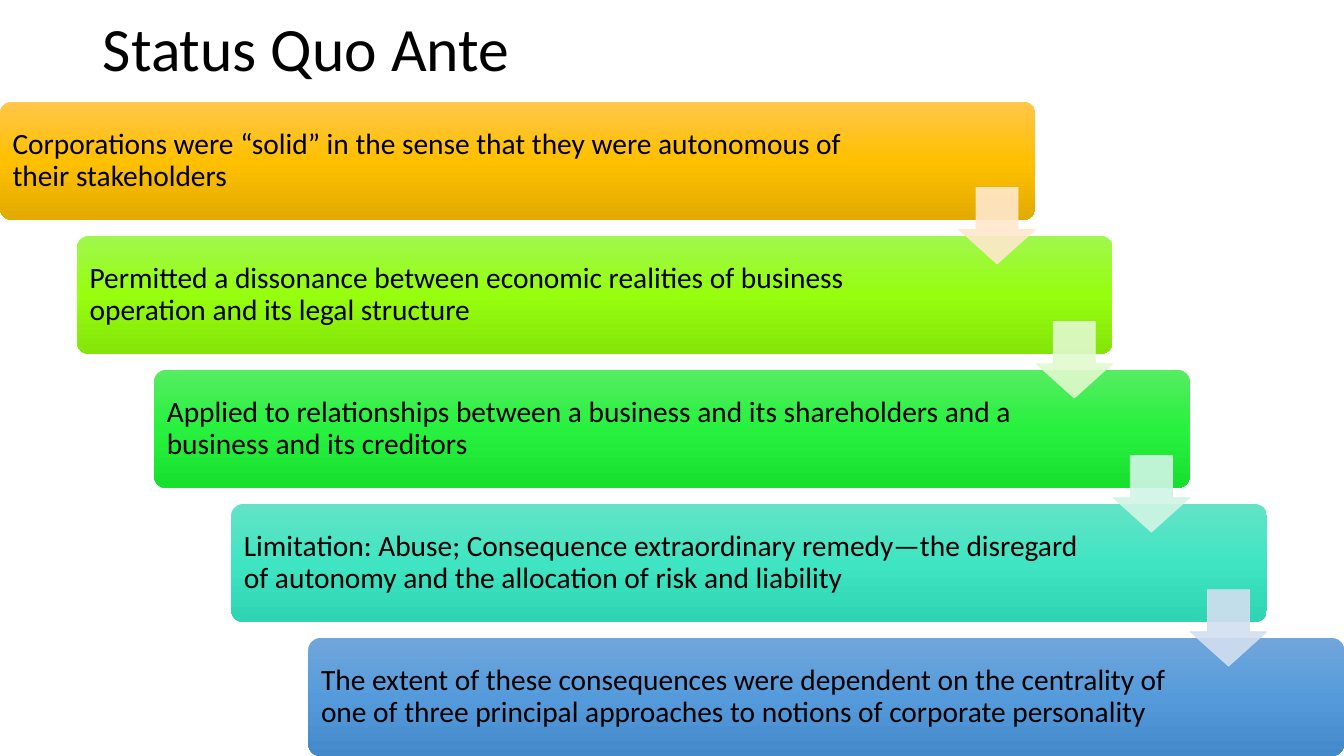
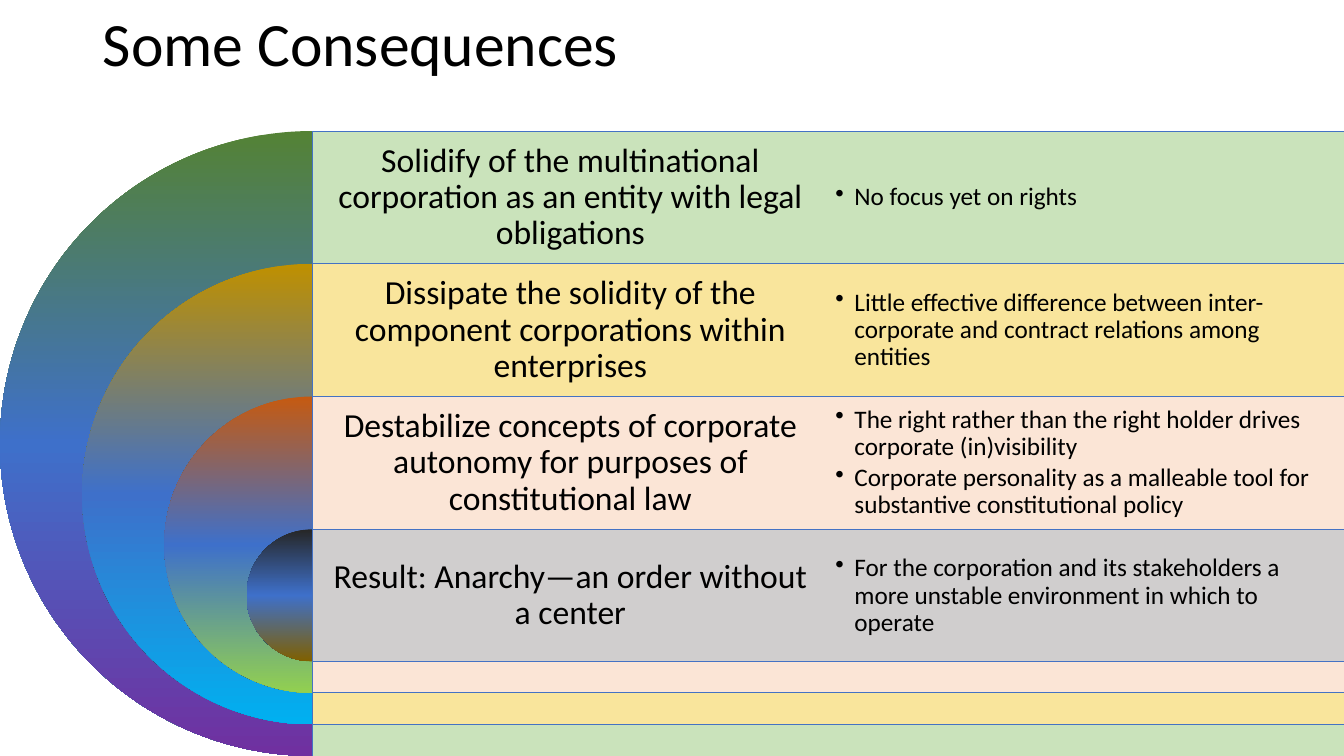
import copy

import lxml.etree
import pptx
import pptx.dml.color
import pptx.enum.shapes
import pptx.enum.text
import pptx.oxml.ns
import pptx.util

Inches = pptx.util.Inches
Pt = pptx.util.Pt
qn = pptx.oxml.ns.qn
Kind = pptx.enum.shapes.MSO_SHAPE
Align = pptx.enum.text.PP_ALIGN
Anchor = pptx.enum.text.MSO_ANCHOR

WIDE, HIGH = 13.33, 7.5
INK, EDGE, MID = "000000", "4472C4", "3E70CA"
TITLE = {"size": Pt(44), "name": "Calibri"}
STEP = {"size": Pt(21), "name": "Calibri"}
HEAD = {"size": Pt(24), "name": "Calibri"}
NOTE = {"size": Pt(18), "name": "Calibri"}
LEFT = {"alignment": Align.LEFT, "line_spacing": 0.9}
CENTER = {"alignment": Align.CENTER, "line_spacing": 0.9}
LIST = {"alignment": Align.LEFT, "line_spacing": 0.9, "space_after": Pt(2.7)}

STEPS = [
    ("Corporations were “solid” in the sense that they were autonomous of their stakeholders",
     ("FFC64B", "FFC000", "E3AB00"), "FFE8CC"),
    ("Permitted a dissonance between economic realities of business operation and its legal structure",
     ("A0F74E", "96FE0E", "85E509"), "E1FACE"),
    ("Applied to relationships between a business and its shareholders and a business and its creditors",
     ("56EC62", "27F13E", "18E02F"), "D0F5E5"),
    ("Limitation: Abuse; Consequence extraordinary remedy—the disregard of autonomy "
     "and the allocation of risk and liability",
     ("63E3C6", "3FE5C3", "2FD4B2"), "D2DFF0"),
    ("The extent of these consequences were dependent on the centrality of "
     "one of three principal approaches to notions of corporate personality",
     ("71A6DB", "559BDB", "448ACA"), None),
]

RINGS = [
    ("Solidify of the multinational corporation as an entity with legal obligations",
     ["No focus yet on rights"],
     ("548235", MID, "7030A0"), "C5E0B4", 90),
    ("Dissipate the solidity of the component corporations within enterprises",
     ["Little effective difference between inter-corporate and contract relations among entities"],
     ("BF9000", MID, "00B0F0"), "FFE699", 90),
    ("Destabilize concepts of corporate autonomy for purposes of constitutional law",
     ["The right rather than the right holder drives corporate (in)visibility",
      "Corporate personality as a malleable tool for substantive constitutional policy"],
     ("C55A11", MID, "92D050"), "FBE5D6", 100),
    ("Result: Anarchy—an order without a center",
     ["For the corporation and its stakeholders a more unstable environment in which to operate"],
     ("262626", MID, "806000"), "D0CECE", 100),
]


def color(text):
    return pptx.dml.color.RGBColor.from_string(text)


def apply(item, values):
    for name, value in values.items():
        setattr(item, name, value)


def place(box):
    return [Inches(size) for size in box]


def bullet(para):
    props = para._p.get_or_add_pPr()
    props.set("marL", str(Inches(0.19)))
    props.set("indent", str(-Inches(0.19)))
    mark = lxml.etree.SubElement(props, qn("a:buChar"))
    mark.set("char", "•")


def write(shape, lines, font, style, pads, marked=False):
    frame = shape.text_frame
    sides = ("margin_left", "margin_top", "margin_right", "margin_bottom")
    apply(frame, dict(zip(sides, place(pads))))
    apply(frame, {"word_wrap": True, "vertical_anchor": Anchor.MIDDLE})
    for index, line in enumerate(lines):
        para = frame.add_paragraph() if index else frame.paragraphs[0]
        if marked:
            bullet(para)
        apply(para, style)
        run = para.add_run()
        run.text = line
        apply(run.font, font)
        run.font.color.rgb = color(INK)


def label(slide, box, *args, **extra):
    write(slide.shapes.add_textbox(*place(box)), *args, **extra)


def block(slide, kind, box, tune=()):
    shape = slide.shapes.add_shape(kind, *place(box))
    shape.shadow.inherit = False
    shape.line.fill.background()
    for index, value in enumerate(tune):
        shape.adjustments[index] = value
    return shape


def blend(shape, tones):
    fill = shape.fill
    fill.gradient()
    fill.gradient_angle = 270
    stops = shape._element.spPr.find(".//" + qn("a:gsLst"))
    stops.insert(1, copy.deepcopy(stops[0]))
    for stop, tone, spot in zip(fill.gradient_stops, tones, (0, 0.5, 1)):
        stop.color.rgb = color(tone)
        stop.position = spot


def paint(item, tone, alpha):
    item.solid()
    item.fore_color.rgb = color(tone)


def tint(shape, fill, line, alpha, clear=100):
    for part, tone, level, tag in (
        (shape.fill, fill, alpha, "a:solidFill"),
        (shape.line.fill, line, clear, "a:ln/a:solidFill"),
    ):
        part.solid()
        part.fore_color.rgb = color(tone)
        if level < 100:
            route = "/".join(qn(name) for name in tag.split("/"))
            node = shape._element.spPr.find(route + "/" + qn("a:srgbClr"))
            lxml.etree.SubElement(node, qn("a:alpha")).set("val", str(level * 1000))
    shape.line.width = Pt(0.5)


def page(deck, title, high):
    slide = deck.slides.add_slide(deck.slide_layouts[5])
    head = slide.shapes.title
    spots = ("left", "top", "width", "height")
    apply(head, dict(zip(spots, place((0.92, 0, 11.5, high)))))
    write(head, [title], TITLE, LEFT, (0.1, 0.05, 0.1, 0.05))
    return slide


def stairs(slide, box):
    left, top, wide, high = box
    card, tall, tip = 10.27, 1.17, 0.76
    last = len(STEPS) - 1
    across, down = (wide - card) / last, (high - tall) / last
    spots = [(left + across * row, top + down * row) for row in range(len(STEPS))]
    for (x, y), (text, tones, _) in zip(spots, STEPS):
        shape = block(slide, Kind.ROUNDED_RECTANGLE, (x, y, card, tall), [0.1])
        blend(shape, tones)
        write(shape, [text], STEP, LEFT, (0.09, 0.09, 1.63, 0.09))
    for (x, y), (_, _, tone) in zip(spots[:-1], STEPS):
        arrow = block(slide, Kind.DOWN_ARROW, (x + card - tip, y + 0.85, tip, tip), [0.55, 0.45])
        tint(arrow, tone, tone, 90, 90)


def target(slide, box):
    left, top, wide, high = box
    row, shrink = 1.32, 1.63
    axis = left + high / 2
    band = left + wide - axis
    half = band / 2
    for index, (head, notes, tones, tone, alpha) in enumerate(RINGS):
        y = top + 1.317 * index
        size = high - shrink * index
        pie = block(slide, Kind.PIE, (axis - size / 2, y, size, size), [54, 162])
        blend(pie, tones)
        bar = block(slide, Kind.RECTANGLE, (axis, y, band, size))
        tint(bar, tone, EDGE, alpha)
        label(slide, (axis, y, half, row), [head], HEAD, CENTER, [0.1] * 4)
        label(slide, (axis + half, y, half, row), notes, NOTE, LIST, [0.07] * 4, marked=True)


def main():
    deck = pptx.Presentation()
    apply(deck, {"slide_width": Inches(WIDE), "slide_height": Inches(HIGH)})
    stairs(page(deck, "Status Quo Ante", 1.02), (0, 1.01, WIDE, HIGH - 1.01))
    target(page(deck, "Some Consequences", 0.92), (0, 1.3, WIDE, HIGH - 1.3))
    deck.save("out.pptx")


if __name__ == "__main__":
    main()
